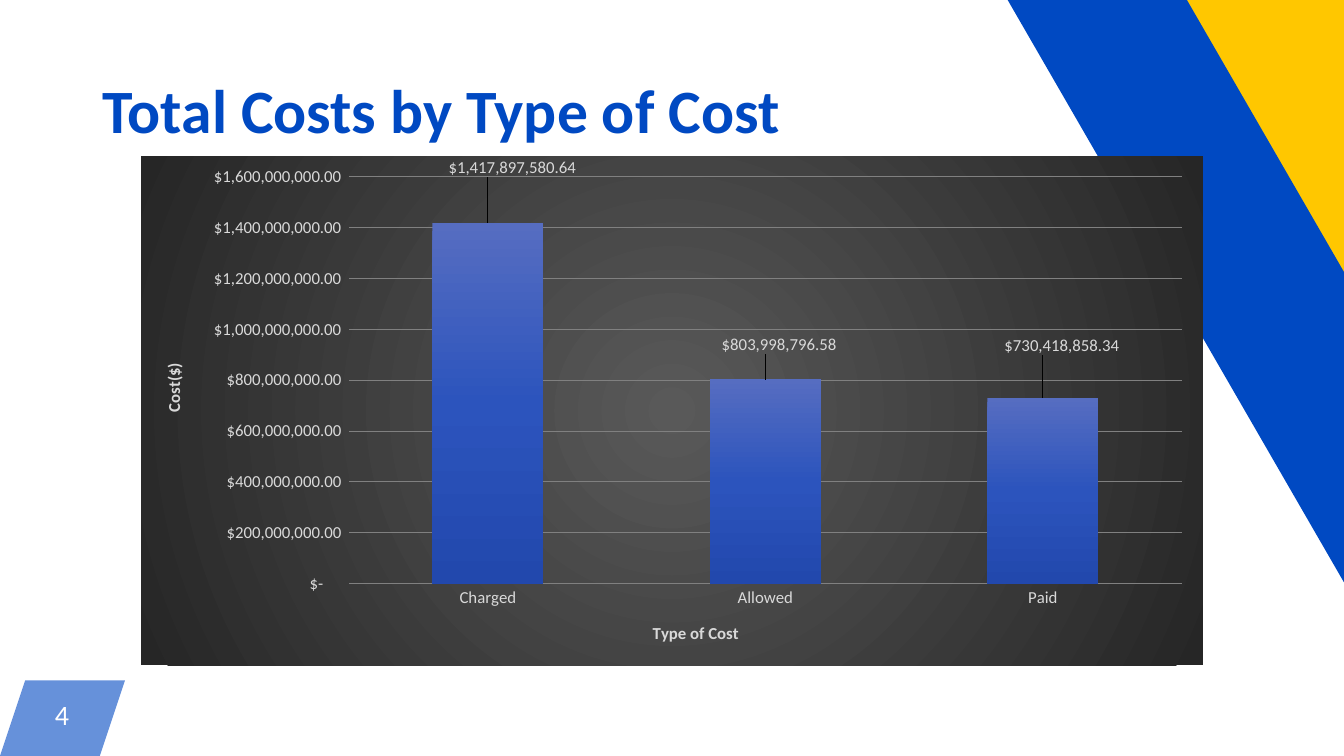
from lxml import etree
from pptx import Presentation
from pptx.chart.data import CategoryChartData
from pptx.dml.color import RGBColor
from pptx.enum.chart import XL_CHART_TYPE, XL_LABEL_POSITION, XL_TICK_MARK
from pptx.enum.shapes import MSO_SHAPE
from pptx.enum.text import MSO_ANCHOR, PP_ALIGN
from pptx.oxml import parse_xml
from pptx.oxml.ns import nsdecls, qn
from pptx.util import Inches, Pt

COLUMNS = XL_CHART_TYPE.COLUMN_CLUSTERED
OUTSIDE_END = XL_LABEL_POSITION.OUTSIDE_END
NO_TICK = XL_TICK_MARK.NONE
RECTANGLE = MSO_SHAPE.RECTANGLE
MIDDLE = MSO_ANCHOR.MIDDLE
LEFT, CENTER = PP_ALIGN.LEFT, PP_ALIGN.CENTER

# Content
FONT = "Calibri"
COLORS = {"blue": "0049C2", "yellow": "FFC700", "white": "FFFFFF",
          "chart_text": "D9D9D9", "grid": "808080"}
TITLE = "Total Costs by Type of Cost"
PAGE_NUMBER = "4"
COSTS = {"Charged": 1417897580.64, "Allowed": 803998796.58, "Paid": 730418858.34}
LABEL_SHIFTS = [(0.023, -0.081), (0.013, -0.04), (0.018, -0.075)]
MONEY = '_("$"* #,##0.00_);_("$"* \\(#,##0.00\\);_("$"* "-"??_);_(@_)'
BACKDROP = [(0, "595959"), (100, "262626")]
COLUMN_FILL = [(0, "566DC1"), (50, "2C54BD"), (100, "2248AD")]
CIRCLE = '<a:path path="circle"><a:fillToRect l="50000" t="50000" r="50000" b="50000"/></a:path>'
DOWNWARD = '<a:lin ang="5400000" scaled="0"/>'
PAGE_TAB = [(0.25, 6.75), (1.24, 6.75), (0.99, 7.5), (0, 7.5)]
# Box, rotation, colour
BANDS = [((12.78, -3.31, 1.97, 9.81), 330.2, "yellow"),
         ((11.82, -1.95, 1.54, 9.81), 330, "blue")]


def rgb(name):
    return RGBColor.from_string(COLORS[name])


def style_font(font, size, color, bold=False):
    font.name, font.size, font.bold = FONT, Pt(size), bold
    font.color.rgb = rgb(color)


def paint(shape, color):
    shape.shadow.inherit = False
    shape.fill.solid()
    shape.fill.fore_color.rgb = rgb(color)
    shape.line.fill.background()


def add_text(slide, text, box, size, color, bold, align, spacing, inset=None):
    frame = slide.shapes.add_textbox(*map(Inches, box)).text_frame
    frame.word_wrap = True
    frame.vertical_anchor = MIDDLE
    if inset is not None:
        frame.margin_left = frame.margin_right = Inches(inset)
        frame.margin_top = frame.margin_bottom = Inches(inset)
    frame.text = text
    paragraph = frame.paragraphs[0]
    paragraph.alignment = align
    paragraph.line_spacing = spacing
    style_font(paragraph.runs[0].font, size, color, bold)


def gradient_properties(stops, direction):
    stop_list = "".join(f'<a:gs pos="{position * 1000}"><a:srgbClr val="{color}"/></a:gs>'
                        for position, color in stops)
    return parse_xml(f'<c:spPr {nsdecls("c", "a")}><a:gradFill><a:gsLst>{stop_list}</a:gsLst>'
                     f'{direction}</a:gradFill><a:ln><a:noFill/></a:ln></c:spPr>')


def manual_layout(**settings):
    """Layout in fractions of the chart's width and height."""
    items = "".join(f'<c:{key} val="{value}"/>' for key, value in settings.items())
    return parse_xml(f'<c:layout {nsdecls("c")}><c:manualLayout>{items}'
                     '</c:manualLayout></c:layout>')


def style_axis(axis, title, left, top):
    axis.major_tick_mark = axis.minor_tick_mark = NO_TICK
    axis.format.line.fill.background()
    style_font(axis.tick_labels.font, 12, "chart_text")
    frame = axis.axis_title.text_frame
    frame.text = title
    style_font(frame.paragraphs[0].runs[0].font, 12, "chart_text", True)
    title_element = axis.axis_title._element
    for layout in title_element.findall(qn("c:layout")):
        title_element.remove(layout)
    title_element.find(qn("c:tx")).addnext(
        manual_layout(xMode="edge", yMode="edge", x=left, y=top))


presentation = Presentation()
presentation.slide_width, presentation.slide_height = Inches(13.33), Inches(7.5)
slide = presentation.slides.add_slide(presentation.slide_layouts[6])

# Page number on its slanted tab
corners = [(Inches(x), Inches(y)) for x, y in PAGE_TAB]
builder = slide.shapes.build_freeform(*corners[0])
builder.add_line_segments(corners[1:], close=True)
page_tab = builder.convert_to_shape()
paint(page_tab, "blue")
tab_color = page_tab._element.spPr.find(".//" + qn("a:srgbClr"))
etree.SubElement(tab_color, qn("a:alpha"), val="60000")
add_text(slide, PAGE_NUMBER, (0.25, 6.75, 0.73, 0.75), 20, "white", False,
         CENTER, Pt(17.7), 0.04)

# Corner bands and title
for box, rotation, color in BANDS:
    band = slide.shapes.add_shape(RECTANGLE, *map(Inches, box))
    band.rotation = rotation
    paint(band, color)
add_text(slide, TITLE, (0.92, 0.4, 11.5, 1.45), 44, "blue", True, LEFT, 0.9)

# Chart and its backdrop
chart_data = CategoryChartData(number_format=MONEY)
chart_data.categories = list(COSTS)
chart_data.add_series("Series 1", list(COSTS.values()))
chart_box = map(Inches, (1.4, 1.55, 10.53, 5.05))
chart = slide.shapes.add_chart(COLUMNS, *chart_box, chart_data).chart
chart.has_legend = chart.has_title = False
style_font(chart.font, 12, "chart_text")
chart_space = chart._chartSpace
chart_space.find(qn("c:txPr")).addprevious(gradient_properties(BACKDROP, CIRCLE))

# Plot area and axes
plot_area = chart_space.find(".//" + qn("c:plotArea"))
for layout in plot_area.findall(qn("c:layout")):
    plot_area.remove(layout)
plot_area.insert(0, manual_layout(layoutTarget="inner", xMode="edge", yMode="edge",
                                  x=0.196, y=0.04, w=0.784, h=0.8))
style_axis(chart.category_axis, "Type of Cost", 0.479, 0.909)
value_axis = chart.value_axis
style_axis(value_axis, "Cost($)", 0.017, 0.4)
value_axis.minimum_scale, value_axis.maximum_scale = 0, 1600000000
value_axis.major_unit = 200000000
value_axis.tick_labels.number_format = MONEY
value_axis.tick_labels.number_format_is_linked = False
value_axis.major_gridlines.format.line.color.rgb = rgb("grid")
value_axis.major_gridlines.format.line.width = Pt(0.75)

# Columns and value labels
plot = chart.plots[0]
plot.gap_width = 150
plot.vary_by_categories = False
series = plot.series[0]
series._element.find(qn("c:tx")).addnext(gradient_properties(COLUMN_FILL, DOWNWARD))
labels = series.data_labels
labels.show_value = True
labels.number_format, labels.number_format_is_linked = MONEY, False
labels.position = OUTSIDE_END
style_font(labels.font, 12, "chart_text")
for index, (shift_x, shift_y) in enumerate(LABEL_SHIFTS):
    label = series.points[index].data_label
    label.position = OUTSIDE_END
    style_font(label.font, 12, "chart_text")
    label_element = series._element.findall(".//" + qn("c:dLbl"))[index]
    layout = manual_layout(x=shift_x, y=shift_y)
    label_element.find(qn("c:idx")).addnext(layout)
    number_format = etree.Element(qn("c:numFmt"), formatCode=MONEY, sourceLinked="0")
    layout.addnext(number_format)

# Moved labels carry no leader lines
series._element.find(qn("c:dLbls")).append(parse_xml(
    f'<c:extLst {nsdecls("c")}><c:ext uri="{{CE6537A1-D6FC-4f65-9D91-7224C49458BB}}" '
    'xmlns:c15="http://schemas.microsoft.com/office/drawing/2012/chart">'
    '<c15:showLeaderLines val="0"/></c:ext></c:extLst>'))

presentation.save("out.pptx")
